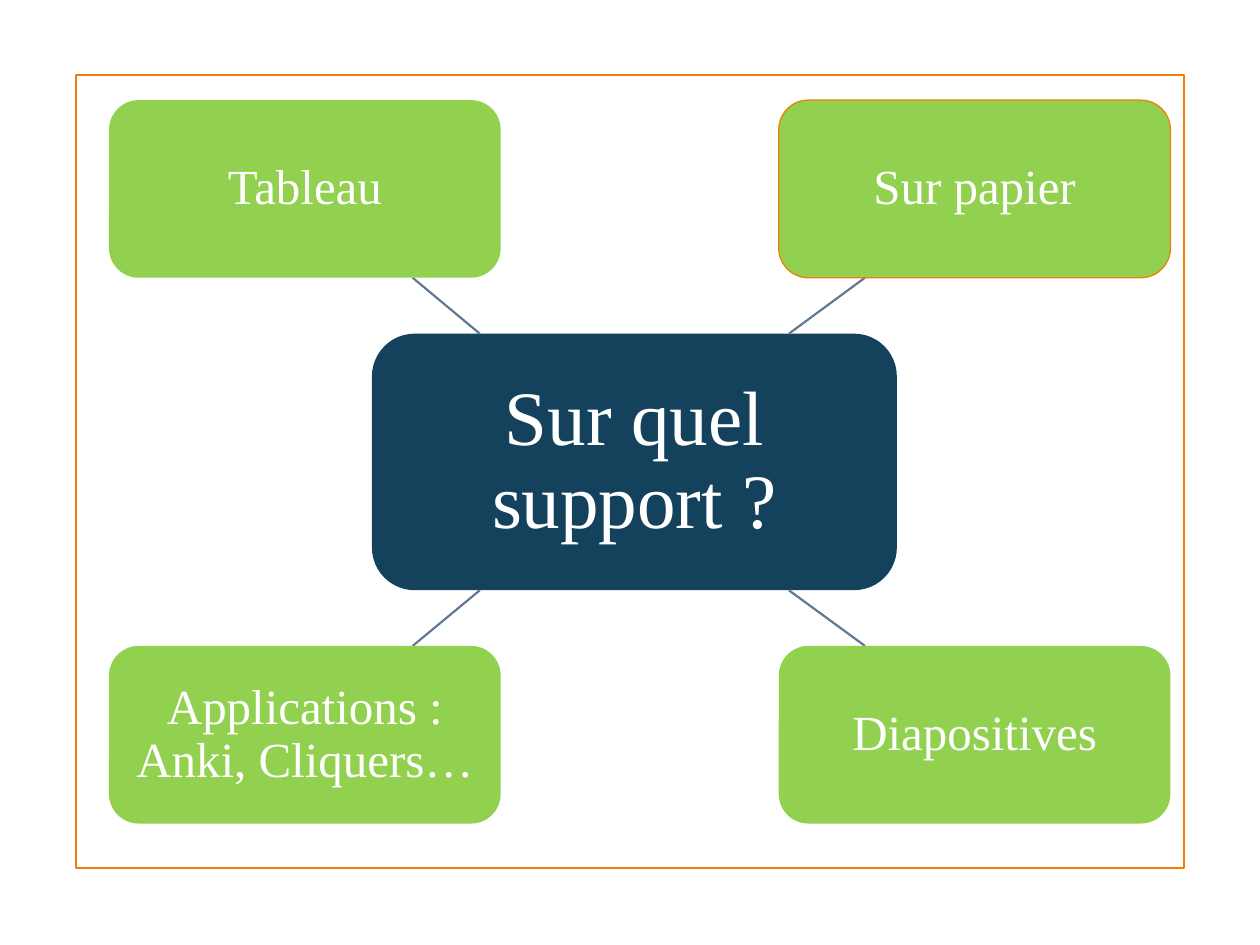
import pptx
import pptx.util
import pptx.dml.color
import pptx.enum.shapes
import pptx.enum.text
import pptx.oxml.ns
from lxml import etree

Pt = pptx.util.Pt
SHAPE = pptx.enum.shapes.MSO_SHAPE
FONT = "Times New Roman"
ORANGE, NAVY, GREEN, SLATE, WHITE = "F07F09", "14415C", "92D050", "607891", "FFFFFF"


def rgb(value):
    return pptx.dml.color.RGBColor.from_string(value)


def apply(target, values):
    """Set each named attribute of target."""
    for name, value in values.items():
        setattr(target, name, value)


class MindMap:
    def __init__(self, s):
        self.s = s

    def shape(self, kind, box, fill=None, line=None, width=1.25):
        sp = self.s.shapes.add_shape(kind, *map(Pt, box))
        sp.shadow.inherit = False
        for part, color in ((sp.fill, fill), (sp.line.fill, line)):
            if color:
                part.solid()
                part.fore_color.rgb = rgb(color)
            else:
                part.background()
        if line:
            sp.line.width = Pt(width)
        return sp

    def topic(self, text, box, fill, size, inset, line=None):
        """Rounded box with centred white text."""
        sp = self.shape(SHAPE.ROUNDED_RECTANGLE, box, fill, line, 0.75)
        tf = sp.text_frame
        margins = ("margin_left", "margin_top", "margin_right", "margin_bottom")
        apply(tf, dict.fromkeys(margins, Pt(inset)))
        apply(tf, {"word_wrap": True,
                   "vertical_anchor": pptx.enum.text.MSO_ANCHOR.MIDDLE})
        p = tf.paragraphs[0]
        apply(p, {"alignment": pptx.enum.text.PP_ALIGN.CENTER, "line_spacing": 0.9})
        r = p.add_run()
        r.text = text
        apply(r.font, {"name": FONT, "size": Pt(size)})
        r.font.color.rgb = rgb(WHITE)

    def branch(self, x1, y1, x2, y2):
        cn = self.s.shapes.add_connector(
            pptx.enum.shapes.MSO_CONNECTOR.STRAIGHT, *map(Pt, (x1, y1, x2, y2)))
        cn.line.color.rgb = rgb(SLATE)
        cn.line.width = Pt(1.25)
        etree.SubElement(cn._element.spPr, pptx.oxml.ns.qn("a:effectLst"))


def main():
    prs = pptx.Presentation()
    apply(prs, {"slide_width": Pt(720), "slide_height": Pt(540)})
    m = MindMap(prs.slides.add_slide(prs.slide_layouts[6]))

    m.shape(SHAPE.RECTANGLE, (43.5, 42.8, 633, 453.2), line=ORANGE)

    hub_x, hub_y, hub_w, hub_h = 212.5, 190.7, 300, 146.6
    m.topic("Sur quel support ?", (hub_x, hub_y, hub_w, hub_h), NAVY, 44, 8.6)

    box_w, box_h = 223.8, 101.5
    left, right, top, bottom = 62.3, 445, 57.2, 369.1
    hub_inset, box_inset = 61.7, 50.3  # from a box's side to its branch
    left_ends = (hub_x + hub_inset, left + box_w - box_inset)
    right_ends = (hub_x + hub_w - hub_inset, right + box_inset - 1)
    top_ends = (hub_y, top + box_h)
    bottom_ends = (hub_y + hub_h, bottom)

    topics = [
        ("Tableau", left, top, left_ends, top_ends, None),
        ("Sur papier", right, top, right_ends, top_ends, ORANGE),
        ("Diapositives", right, bottom, right_ends, bottom_ends, None),
        ("Applications : Anki, Cliquers…", left, bottom, left_ends, bottom_ends, None),
    ]
    for text, x, y, (x1, x2), (y1, y2), line in topics:
        m.branch(x1, y1, x2, y2)
        m.topic(text, (x, y, box_w, box_h), GREEN, 28, 5.8, line)

    prs.save("out.pptx")


if __name__ == "__main__":
    main()
